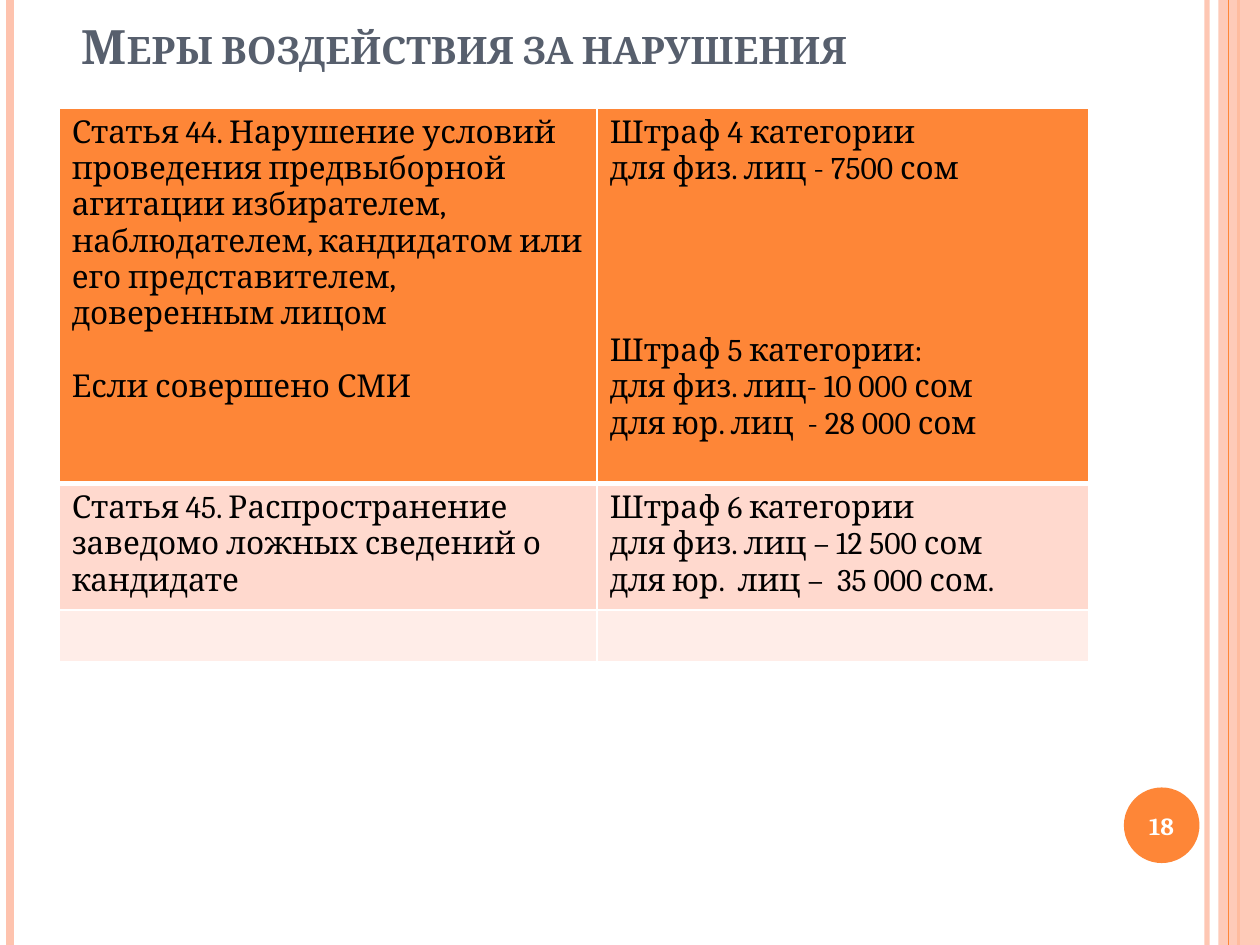
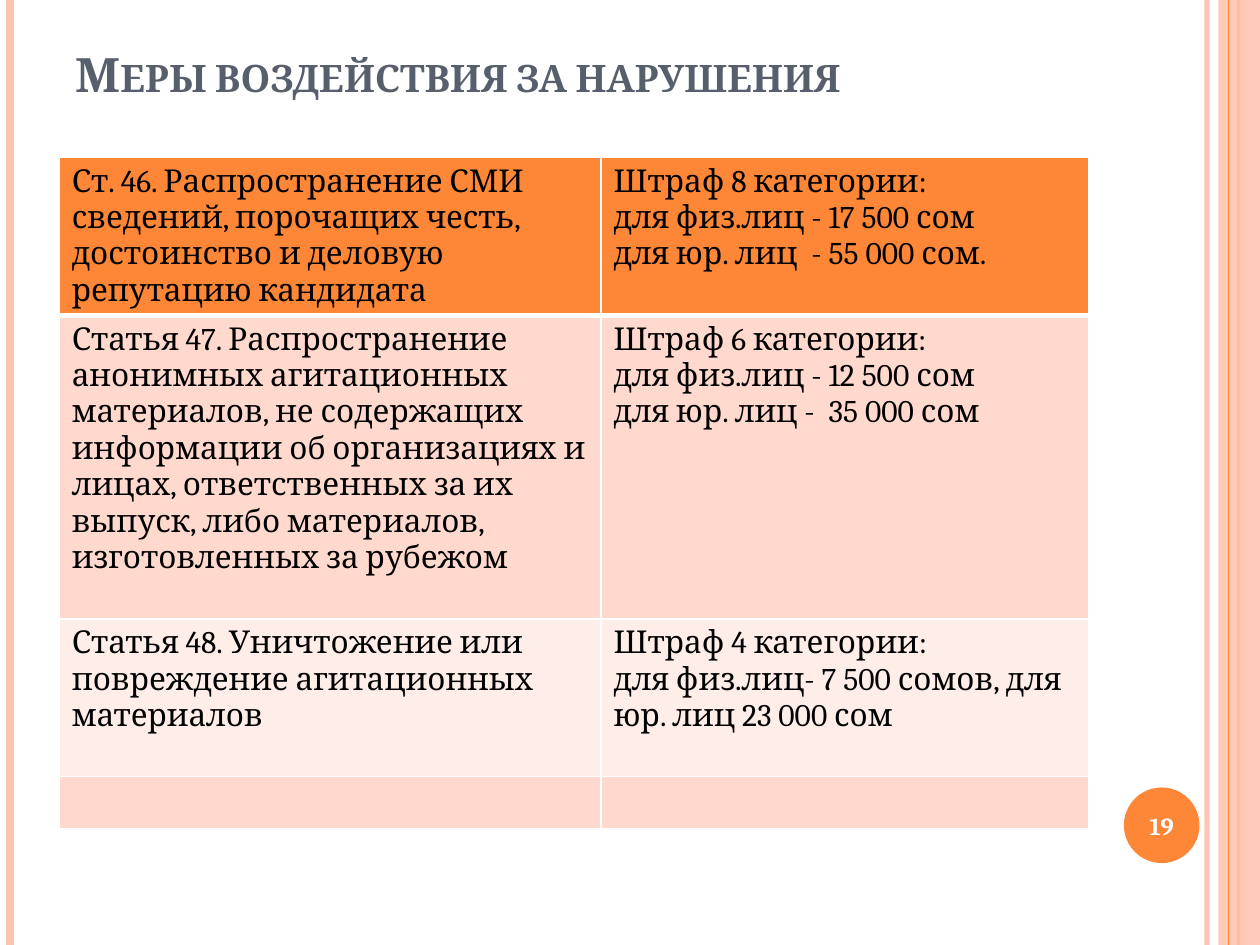
from lxml.etree import SubElement
from pptx import Presentation
from pptx.dml.color import RGBColor
from pptx.enum.shapes import MSO_CONNECTOR as CONN, MSO_SHAPE as SHAPE
from pptx.enum.text import MSO_ANCHOR as ANCHOR, PP_ALIGN as ALIGN
from pptx.oxml.ns import qn
from pptx.util import Inches, Pt

FONT = "Cambria"
ORANGE, PEACH, SLATE = "FE8637", "FEC3AE", "575F6D"
WHITE, BLACK = "FFFFFF", "000000"
BANDS = ("FFD9CE", "FFEDE8")
TITLE = "Меры воздействия за нарушения"
BLANK_LINE = 20.8  # height of one 18 pt line


def rgb(value):
    return RGBColor.from_string(value)


def set_alpha(fill_parent, percent):
    color = fill_parent.find(".//" + qn("a:srgbClr"))
    SubElement(color, qn("a:alpha"), val=str(percent * 1000))


class Deck:
    def __init__(self):
        self.prs = Presentation()
        self.prs.slide_width, self.prs.slide_height = Inches(10), Inches(7.5)
        self.s = None

    def new_slide(self, number, title_left, title_top, title_height):
        self.s = self.prs.slides.add_slide(self.prs.slide_layouts[5])
        self.frame()
        self.page_number(number)
        self.title(title_left, title_top, title_height)

    def style(self, p, size, color, bold=False):
        for r in p.runs:
            r.font.name, r.font.size, r.font.bold = FONT, Pt(size), bold
            r.font.color.rgb = rgb(color)

    def title(self, left, top, height):
        sp = self.s.shapes.title
        sp.left, sp.top = Inches(left), Inches(top)
        sp.width, sp.height = Inches(8.17), Inches(height)
        tf = sp.text_frame
        tf.text = TITLE
        tf.vertical_anchor = ANCHOR.BOTTOM
        p = tf.paragraphs[0]
        p.alignment = ALIGN.LEFT
        self.style(p, 27, SLATE, bold=True)
        p.runs[0].font._element.set("cap", "small")

    def vertical_line(self, x, color, width, alpha=None):
        line = self.s.shapes.add_connector(
            CONN.STRAIGHT, Inches(x), 0, Inches(x), self.prs.slide_height)
        line.line.color.rgb = rgb(color)
        line.line.width = Pt(width)
        if alpha:
            set_alpha(line._element.spPr, alpha)
        SubElement(line._element.spPr, qn("a:effectLst"))

    def shape(self, kind, left, top, width, height, color):
        sp = self.s.shapes.add_shape(
            kind, Inches(left), Inches(top), Inches(width), Inches(height))
        sp.shadow.inherit = False
        sp.fill.solid()
        sp.fill.fore_color.rgb = rgb(color)
        sp.line.fill.background()
        return sp

    def frame(self):
        self.vertical_line(9.58, PEACH, 3, alpha=93)
        self.vertical_line(0.08, PEACH, 4.5)
        self.vertical_line(9.83, ORANGE, 1.5)
        band = self.shape(SHAPE.RECTANGLE, 9.67, 0, 0.33, 7.5, PEACH)
        set_alpha(band._element.spPr, 87)
        self.vertical_line(9.75, ORANGE, 0.75)

    def page_number(self, number):
        tf = self.shape(SHAPE.OVAL, 8.92, 6.25, 0.6, 0.6, ORANGE).text_frame
        tf.margin_left = tf.margin_right = 0
        tf.vertical_anchor = ANCHOR.MIDDLE
        tf.text = str(number)
        p = tf.paragraphs[0]
        p.alignment = ALIGN.CENTER
        self.style(p, 14, WHITE, bold=True)

    def borders(self, cell, top, bottom):
        tc_pr = cell._tc.get_or_add_tcPr()
        for side, width in (("L", 1), ("R", 1), ("T", top), ("B", bottom)):
            ln = SubElement(tc_pr, qn("a:ln" + side), w=str(Pt(width)))
            fill = SubElement(ln, qn("a:solidFill"))
            SubElement(fill, qn("a:srgbClr"), val=WHITE)

    def cell_text(self, cell, text, gap, gap_lines):
        """Write the lines; paragraph number `gap` gets blank lines above."""
        cell.text_frame.text = text
        for i, p in enumerate(cell.text_frame.paragraphs):
            self.style(p, 18, BLACK)
            if i == gap:
                p.space_before = Pt(BLANK_LINE * gap_lines)

    def table(self, top, columns, heights, rows, gaps=None):
        gaps = gaps or {}
        table = self.s.shapes.add_table(
            len(heights), len(columns), Inches(0.47), Inches(top),
            Inches(sum(columns)), Inches(sum(heights))).table
        for column, width in zip(table.columns, columns):
            column.width = Inches(width)
        for i, height in enumerate(heights):
            table.rows[i].height = Inches(height)
            color = BANDS[(i - 1) % 2] if i else ORANGE
            for j in range(len(columns)):
                cell = table.cell(i, j)
                self.borders(cell, 3 if i == 1 else 1, 3 if i == 0 else 1)
                cell.fill.solid()
                cell.fill.fore_color.rgb = rgb(color)
                if i < len(rows):
                    self.cell_text(cell, rows[i][j], *gaps.get((i, j), (None, 0)))


def main():
    deck = Deck()

    # Articles 44 and 45
    deck.new_slide(18, 0.55, 0.16, 0.48)
    deck.table(0.86, (4.27, 3.9), (2.98, 1, 0.41), [
        ("Статья 44. Нарушение условий проведения предвыборной агитации "
         "избирателем, наблюдателем, кандидатом или его представителем, "
         "доверенным лицом\nЕсли совершено СМИ",
         "Штраф 4 категории\nдля физ. лиц - 7500 сом\nШтраф 5 категории:\n"
         "для физ. лиц- 10 000 сом\nдля юр. лиц  - 28 000 сом"),
        ("Статья 45. Распространение заведомо ложных сведений о кандидате",
         "Штраф 6 категории\nдля физ. лиц – 12 500 сом\n"
         "для юр.  лиц –  35 000 сом."),
    ], gaps={(0, 0): (1, 1), (0, 1): (2, 4)})

    # Articles 46 to 48
    deck.new_slide(19, 0.5, 0.3, 0.56)
    deck.table(1.25, (4.3, 3.87), (1.25, 2.41, 1.25, 0.41), [
        ("Ст. 46. Распространение СМИ сведений, порочащих честь, "
         "достоинство и деловую репутацию кандидата",
         "Штраф 8 категории:\nдля физ.лиц - 17 500 сом\n"
         "для юр. лиц  - 55 000 сом."),
        ("Статья 47. Распространение анонимных агитационных материалов, "
         "не содержащих информации об организациях и лицах, ответственных "
         "за их выпуск, либо материалов, изготовленных за рубежом",
         "Штраф 6 категории:\nдля физ.лиц - 12 500 сом\n"
         "для юр. лиц -  35 000 сом"),
        ("Статья 48. Уничтожение или повреждение агитационных материалов",
         "Штраф 4 категории:\n"
         "для физ.лиц- 7 500 сомов, для юр. лиц 23 000 сом"),
    ])

    deck.prs.save("out.pptx")


if __name__ == "__main__":
    main()
